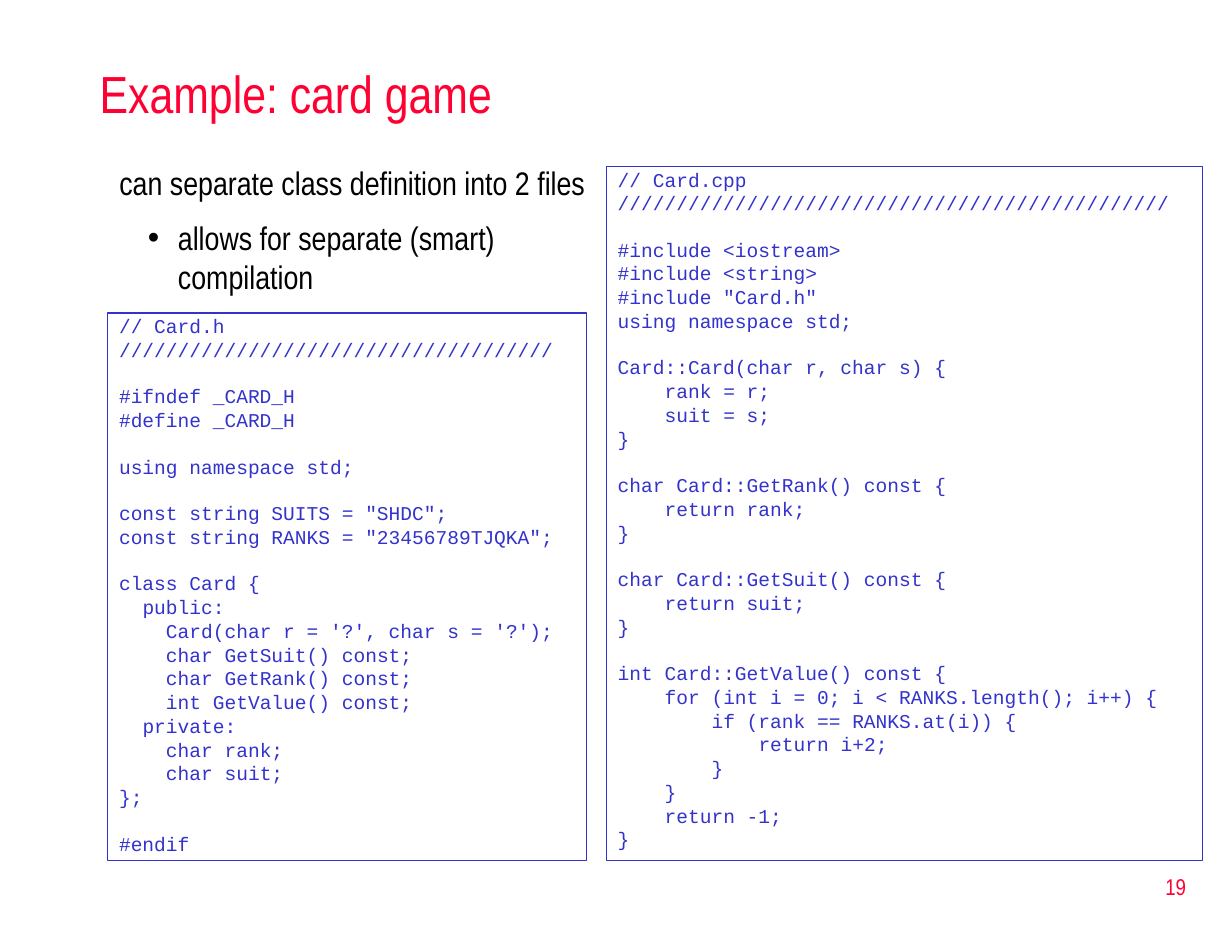
"""Build the card game slide: a short list beside two framed code listings."""
from lxml.etree import SubElement
from pptx import Presentation
from pptx.dml.color import RGBColor
from pptx.enum.text import MSO_ANCHOR, MSO_AUTO_SIZE, PP_ALIGN
from pptx.oxml.ns import qn
from pptx.util import Pt

TITLE = "Example: card game"
POINTS = [
    ("can separate class definition into 2 files", None),
    ("allows for separate (smart) compilation", "•"),
]
CARD_HEADER = """\
// Card.h
/////////////////////////////////////

#ifndef _CARD_H
#define _CARD_H

using namespace std;

const string SUITS = "SHDC";
const string RANKS = "23456789TJQKA";

class Card {
  public:
    Card(char r = '?', char s = '?');
    char GetSuit() const;
    char GetRank() const;
    int GetValue() const;
  private:
    char rank;
    char suit;
};

#endif"""
CARD_SOURCE = """\
// Card.cpp
///////////////////////////////////////////////

#include <iostream>
#include <string>
#include "Card.h"
using namespace std;

Card::Card(char r, char s) {
    rank = r;
    suit = s;
}

char Card::GetRank() const {
    return rank;
}

char Card::GetSuit() const {
    return suit;
}

int Card::GetValue() const {
    for (int i = 0; i < RANKS.length(); i++) {
        if (rank == RANKS.at(i)) {
            return i+2;
        }
    }
    return -1;
}"""
LISTINGS = [
    (CARD_HEADER, (66, 192, 294, 336)),
    (CARD_SOURCE, (372, 102, 366, 426)),
]
RED, BLUE, BLACK = "FF0033", "3333CC", "000000"
SANS, MONO = "Arial Narrow", "Courier New"
CODE_SIZE, CHARACTER_WIDTH = 12, 7.2
LINE_GAP, LINE_PITCH = 3.05, 13.93


def color(value):
    return RGBColor.from_string(value)


def place(shape, left, top, width, height):
    shape.left, shape.top = Pt(left), Pt(top)
    shape.width, shape.height = Pt(width), Pt(height)


def prepare(shape, anchor=MSO_ANCHOR.TOP, wrap=True):
    frame = shape.text_frame
    frame.auto_size = MSO_AUTO_SIZE.NONE
    frame.word_wrap = wrap
    frame.vertical_anchor = anchor
    return frame


def write(frame, text, size=20, font=SANS, fill=BLACK, align=PP_ALIGN.LEFT,
          before=0, spacing=1.0, margin=0, indent=0, bullet=None, level=0):
    first = frame.paragraphs[0]
    paragraph = frame.add_paragraph() if first.runs else first
    paragraph.level = level
    paragraph.alignment = align
    paragraph.space_before = Pt(before)
    paragraph.line_spacing = spacing
    properties = paragraph._p.get_or_add_pPr()
    properties.set("marL", str(Pt(margin)))
    properties.set("indent", str(Pt(indent)))
    if bullet:
        SubElement(properties, qn("a:buChar"), char=bullet)
    else:
        SubElement(properties, qn("a:buNone"))
    run = paragraph.add_run()
    run.text = text
    run.font.size = Pt(size)
    run.font.name = font
    run.font.color.rgb = color(fill)


def add_listing(slide, code, box):
    shape = slide.shapes.add_textbox(*map(Pt, box))
    shape.line.color.rgb = color(BLUE)
    shape.line.width = Pt(0.75)
    frame = prepare(shape)
    gap = LINE_GAP
    for line in code.splitlines():
        if not line:
            gap += LINE_PITCH
            continue
        text = line.lstrip()
        write(frame, text, size=CODE_SIZE, font=MONO, fill=BLUE, before=gap,
              spacing=0.8, margin=(len(line) - len(text)) * CHARACTER_WIDTH)
        gap = LINE_GAP


def main():
    presentation = Presentation()
    presentation.slide_width, presentation.slide_height = Pt(756), Pt(576)
    slide = presentation.slides.add_slide(presentation.slide_layouts[1])

    title, body = slide.placeholders
    place(title, 54, 30, 684, 54)
    write(prepare(title, MSO_ANCHOR.MIDDLE), TITLE, size=32, fill=RED)

    place(body, 66, 96, 312, 91.5)
    frame = prepare(body)
    for text, bullet in POINTS:
        layout = {"margin": 36, "indent": -18.5, "level": 1} if bullet else {}
        write(frame, text, before=10, bullet=bullet, **layout)

    for code, box in LISTINGS:
        add_listing(slide, code, box)

    number = slide.shapes.add_textbox(Pt(577.5), Pt(525), Pt(157.5), Pt(38))
    write(prepare(number, MSO_ANCHOR.MIDDLE), "19", size=14, fill=RED,
          align=PP_ALIGN.RIGHT)
    presentation.save("out.pptx")


if __name__ == "__main__":
    main()
